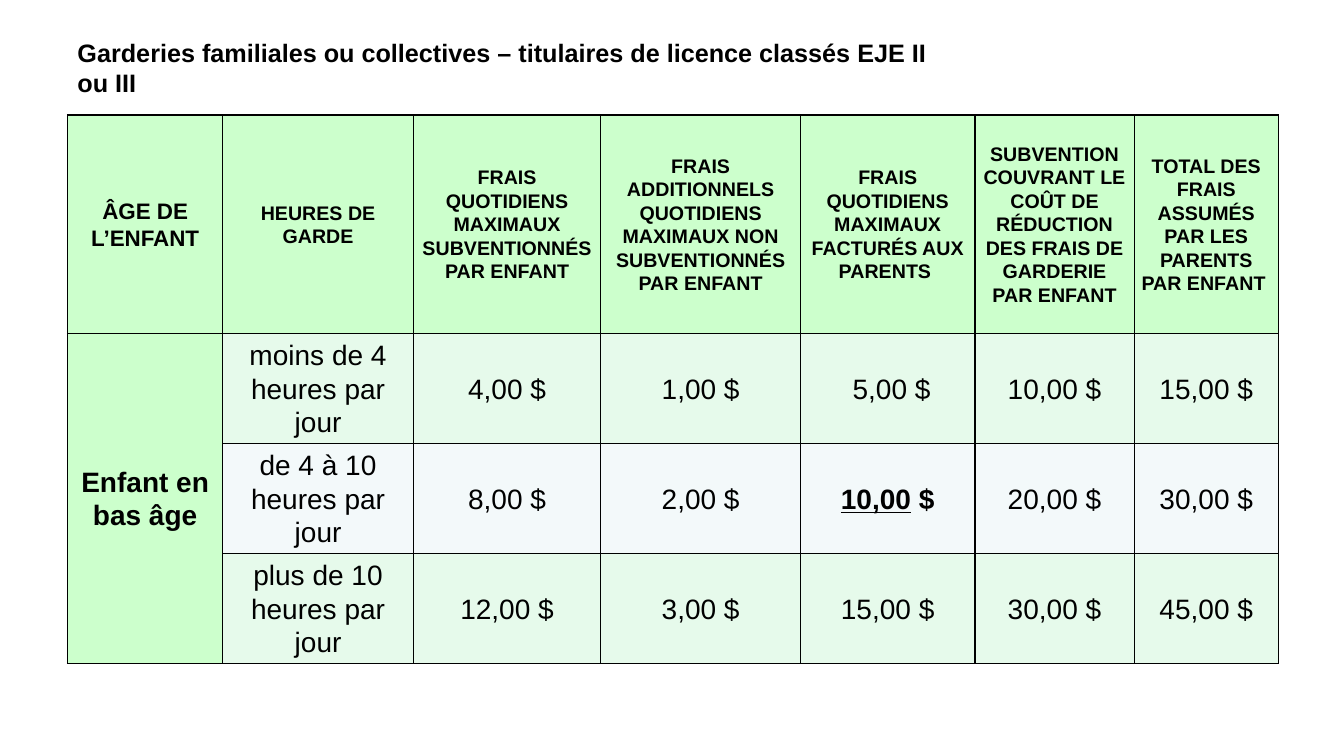
import pptx
import pptx.dml.color
import pptx.enum.text
import pptx.oxml.ns
import pptx.util
from lxml import etree

Inches = pptx.util.Inches
Pt = pptx.util.Pt
ANCHOR = pptx.enum.text.MSO_ANCHOR
ALIGN = pptx.enum.text.PP_ALIGN

HEADER_GREEN = "CCFFCC"
BAND_FILLS = ["E6FAEB", "F3F9FA", "E6FAEB"]
COLUMN_WIDTHS = [1.54, 1.89, 1.86, 1.98, 1.73, 1.58, 1.43]
ROW_HEIGHTS = [2.17, 1.09, 1.09, 1.09]

TITLE = "Garderies familiales ou collectives – titulaires de licence classés EJE II ou III"
HEADERS = [
    "ÂGE DE L’ENFANT",
    "HEURES DE GARDE",
    "FRAIS QUOTIDIENS MAXIMAUX SUBVENTIONNÉS PAR ENFANT",
    "FRAIS ADDITIONNELS QUOTIDIENS MAXIMAUX NON SUBVENTIONNÉS PAR ENFANT",
    "FRAIS QUOTIDIENS MAXIMAUX FACTURÉS AUX PARENTS ",
    "SUBVENTION COUVRANT LE COÛT DE RÉDUCTION DES FRAIS DE GARDERIE PAR ENFANT",
    "TOTAL DES FRAIS ASSUMÉS PAR LES PARENTS PAR ENFANT ",
]
AGE_GROUP = "Enfant en bas âge"
FEES = [
    ["moins de 4 heures par jour", "4,00 $", "1,00 $", " 5,00 $", "10,00 $", "15,00 $"],
    ["de 4 à 10 heures par jour", "8,00 $", "2,00 $", "10,00 $", "20,00 $", "30,00 $"],
    ["plus de 10 heures par jour", "12,00 $", "3,00 $", "15,00 $", "30,00 $", "45,00 $"],
]
KEY_FEE = (2, 4)  # row and column of the emphasised daily fee


def rgb(value):
    return pptx.dml.color.RGBColor.from_string(value)


def add_text(paragraph, text, size=20, bold=False, underline=False, color="000000"):
    run = paragraph.add_run()
    run.text = text
    run.font.name = "Arial"
    run.font.size = Pt(size)
    run.font.bold = bold
    run.font.underline = underline
    run.font.color.rgb = rgb(color)


def add_title(slide):
    title = slide.shapes.add_textbox(Inches(0.67), Inches(0.33), Inches(8.78), Inches(0.93))
    frame = title.text_frame
    frame.word_wrap = True
    frame.vertical_anchor = ANCHOR.TOP
    frame.margin_top = Inches(0.04)
    add_text(frame.paragraphs[0], TITLE, size=18, bold=True)


def add_borders(cell, color="000000", width=1):
    properties = cell._tc.get_or_add_tcPr()
    for side in ("a:lnL", "a:lnR", "a:lnT", "a:lnB"):
        line = etree.SubElement(properties, pptx.oxml.ns.qn(side), w=str(Pt(width)))
        fill = etree.SubElement(line, pptx.oxml.ns.qn("a:solidFill"))
        etree.SubElement(fill, pptx.oxml.ns.qn("a:srgbClr"), val=color)


def style_cell(cell, fill):
    add_borders(cell)
    cell.fill.solid()
    cell.fill.fore_color.rgb = rgb(fill)
    cell.vertical_anchor = ANCHOR.MIDDLE
    cell.margin_left = cell.margin_right = Inches(0.06)
    cell.margin_top = cell.margin_bottom = 0
    paragraph = cell.text_frame.paragraphs[0]
    paragraph.alignment = ALIGN.CENTER
    paragraph.line_spacing = 1.07
    return paragraph


def add_fee_table(slide):
    frame = slide.shapes.add_table(
        len(ROW_HEIGHTS), len(COLUMN_WIDTHS), Inches(0.67), Inches(1.14),
        Inches(sum(COLUMN_WIDTHS)), Inches(sum(ROW_HEIGHTS)))
    table = frame.table
    table.horz_banding = False
    for column, width in zip(table.columns, COLUMN_WIDTHS):
        column.width = Inches(width)
    for row, height in zip(table.rows, ROW_HEIGHTS):
        row.height = Inches(height)

    # Header row
    for col, header in enumerate(HEADERS):
        paragraph = style_cell(table.cell(0, col), HEADER_GREEN)
        add_text(paragraph, header, size=16 if col == 0 else 14, bold=True)

    # Age group spanning all fee rows
    table.cell(1, 0).merge(table.cell(len(FEES), 0))
    for row in range(1, len(FEES) + 1):
        paragraph = style_cell(table.cell(row, 0), HEADER_GREEN)
        if row == 1:
            add_text(paragraph, AGE_GROUP, bold=True)

    # Hours and fees
    for row, (fees, fill) in enumerate(zip(FEES, BAND_FILLS), start=1):
        for col, fee in enumerate(fees, start=1):
            paragraph = style_cell(table.cell(row, col), fill)
            if (row, col) == KEY_FEE:
                add_text(paragraph, fee[:-2], bold=True, underline=True)
                add_text(paragraph, fee[-2:], bold=True)
            else:
                add_text(paragraph, fee)


def main():
    deck = pptx.Presentation()
    deck.slide_width = Inches(13.33)
    deck.slide_height = Inches(7.5)
    slide = deck.slides.add_slide(deck.slide_layouts[6])
    add_title(slide)
    add_fee_table(slide)
    deck.save("out.pptx")


if __name__ == "__main__":
    main()
